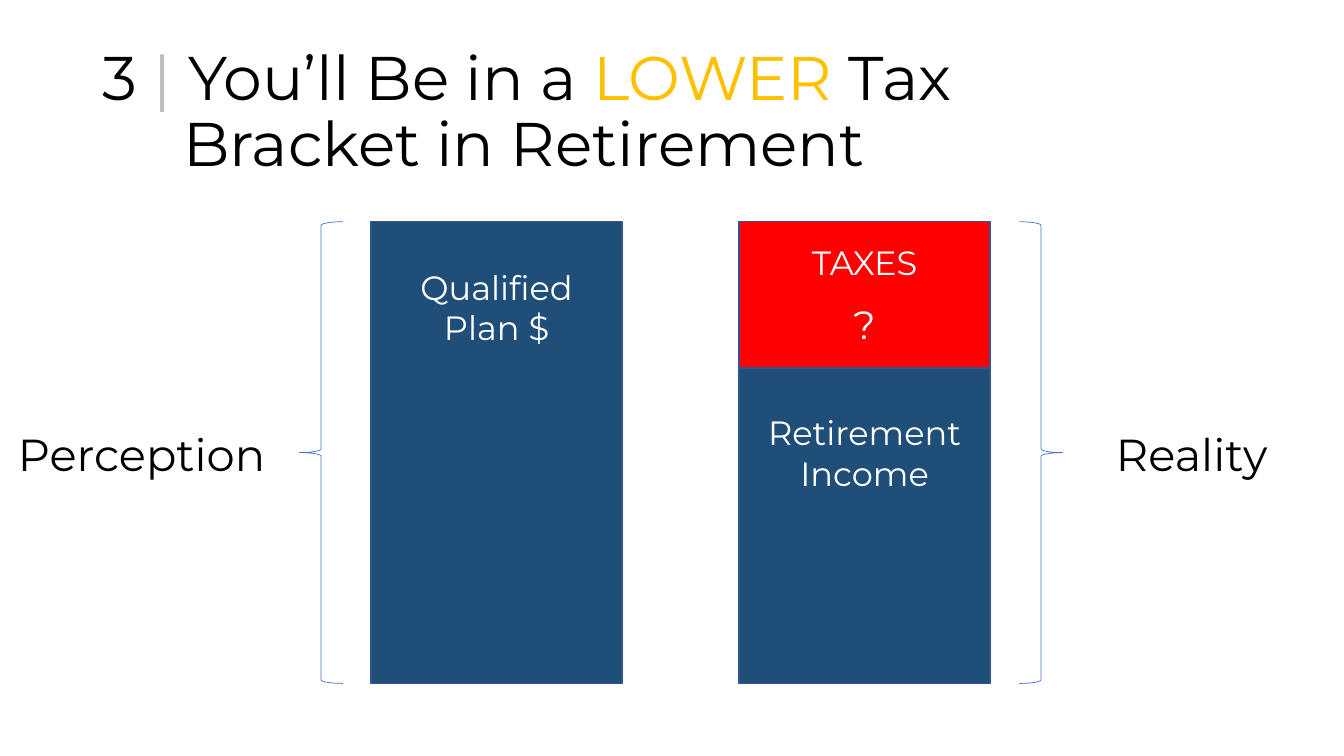
import pptx
import pptx.dml.color
import pptx.enum.shapes
import pptx.enum.text
import pptx.util

PX = 9144
FONT = "Montserrat"
BLACK, WHITE, GREY, GOLD = "000000", "FFFFFF", "BFBFBF", "FFC000"
NAVY, RED, OUTLINE, BRACE = "1F4E79", "FF0000", "325491", "4472C4"
ALIGN = pptx.enum.text.PP_ALIGN
ANCHOR = pptx.enum.text.MSO_ANCHOR
SHAPE = pptx.enum.shapes.MSO_SHAPE


def px(length):
    return pptx.util.Emu(length * PX)


def rgb(value):
    return pptx.dml.color.RGBColor.from_string(value)


def add_run(paragraph, text, size, color):
    run = paragraph.add_run()
    run.text = text
    run.font.name = FONT
    run.font.size = pptx.util.Pt(size)
    run.font.color.rgb = rgb(color)


def add_text(slide, box, lines, size=24, color=WHITE, align=ALIGN.CENTER, gap=0):
    frame = slide.shapes.add_textbox(*map(px, box)).text_frame
    frame.word_wrap = True
    for index, line in enumerate(lines):
        paragraph = frame.paragraphs[0] if index == 0 else frame.add_paragraph()
        paragraph.alignment = align
        text, line_size = line if isinstance(line, tuple) else (line, size)
        if index and gap:
            paragraph.space_before = pptx.util.Pt(gap)
        add_run(paragraph, text, line_size, color)


def add_outline(slide, kind, box, line, width, fill=None):
    shape = slide.shapes.add_shape(kind, *map(px, box))
    shape.shadow.inherit = False
    if fill:
        shape.fill.solid()
        shape.fill.fore_color.rgb = rgb(fill)
    else:
        shape.fill.background()
    shape.line.color.rgb = rgb(line)
    shape.line.width = pptx.util.Pt(width)
    return shape


def add_title(slide, box):
    title = slide.shapes.title
    title.left, title.top, title.width, title.height = map(px, box)
    frame = title.text_frame
    frame.word_wrap = True
    frame.auto_size = pptx.enum.text.MSO_AUTO_SIZE.NONE
    frame.vertical_anchor = ANCHOR.MIDDLE
    paragraph = frame.paragraphs[0]
    paragraph.alignment = ALIGN.LEFT
    paragraph.line_spacing = 0.9
    properties = paragraph._p.get_or_add_pPr()
    properties.set("marL", str(px(80)))
    properties.set("indent", str(-px(80)))
    for text, color in (("3 ", BLACK), ("|", GREY), (" You’ll Be in a ", BLACK),
                        ("LOWER", GOLD), (" Tax", BLACK)):
        add_run(paragraph, text, 44, color)
    paragraph.add_line_break()
    add_run(paragraph, "Bracket in Retirement", 44, BLACK)


def add_bar(slide, box, fill=NAVY):
    add_outline(slide, SHAPE.RECTANGLE, box, OUTLINE, 1, fill)


def add_perception(slide, box):
    left, top, width, height = box
    add_bar(slide, box)
    add_text(slide, (left, top + 40, width, 91), ["Qualified Plan $"])
    add_outline(slide, SHAPE.LEFT_BRACE, (left - 71, top, 43, height), BRACE, 0.5)
    add_text(slide, (left - 360, top + 198, 289, 64), ["Perception"],
             size=32, color=BLACK, align=ALIGN.LEFT)


def add_reality(slide, box):
    left, top, width, height = box
    add_bar(slide, box)
    add_bar(slide, (left, top, width, 145), RED)
    add_text(slide, (left, top + 15, width, 116), ["TAXES", ("?", 28)], gap=13)
    add_text(slide, (left, top + 184, width, 157), ["Retirement", "Income"])
    brace = add_outline(slide, SHAPE.LEFT_BRACE, (left + 278, top, 43, height), BRACE, 0.5)
    brace.rotation = 180
    add_text(slide, (left + 364, top + 198, 215, 64), ["Reality"],
             size=32, color=BLACK, align=ALIGN.LEFT)


def main():
    presentation = pptx.Presentation()
    presentation.slide_width, presentation.slide_height = px(1333), px(750)
    slide = presentation.slides.add_slide(presentation.slide_layouts[5])
    add_title(slide, (92, 40, 1150, 145))
    add_perception(slide, (368, 220, 249, 458))
    add_reality(slide, (733, 220, 249, 458))
    presentation.save("out.pptx")


if __name__ == "__main__":
    main()
